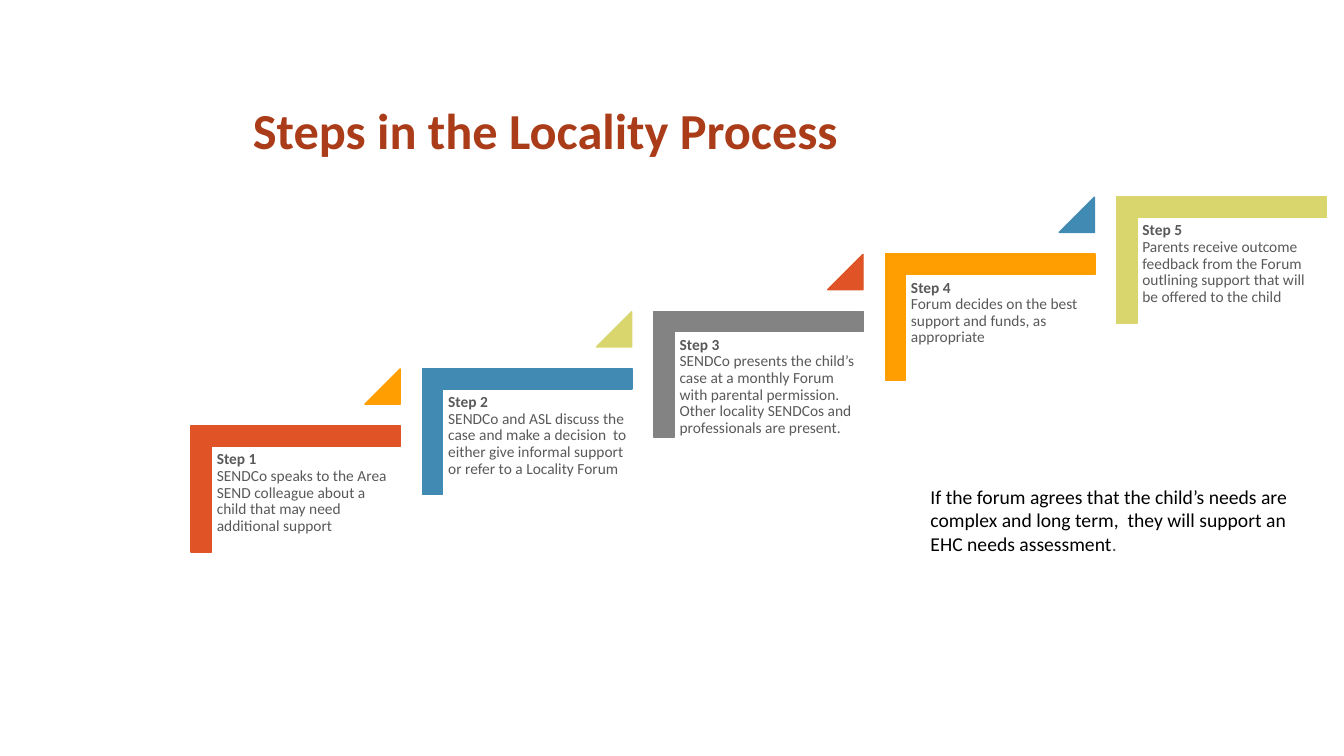
from pptx import Presentation
from pptx.dml.color import RGBColor
from pptx.enum.shapes import MSO_SHAPE
from pptx.enum.text import MSO_ANCHOR, PP_ALIGN
from pptx.util import Inches, Pt

COLORS = {
    "title": "AB3C19", "body": "595959", "black": "000000",
    "red": "DF5327", "blue": "418AB3", "gray": "838383",
    "orange": "FE9E00", "lime": "D9D66D",
}
# Label, description, bracket colour, triangle colour
STEPS = [
    ("Step 1", "SENDCo speaks to the Area SEND colleague about a child "
     "that may need additional support", "red", "orange"),
    ("Step 2", "SENDCo and ASL discuss the case and make a decision  to either "
     "give informal support or refer to a Locality Forum", "blue", "lime"),
    ("Step 3", "SENDCo presents the child’s case at a monthly Forum with parental "
     "permission. Other locality SENDCos and professionals are present.", "gray", "red"),
    ("Step 4", "Forum decides on the best support and funds, as appropriate",
     "orange", "blue"),
    ("Step 5", "Parents receive outcome feedback from the Forum outlining support "
     "that will be offered to the child", "lime", None),
]
STEP_RIGHT, STEP_UP = 2.295, 0.568

prs = Presentation()
prs.slide_width, prs.slide_height = Inches(13.33), Inches(7.5)
s = prs.slides.add_slide(prs.slide_layouts[6])


def add_text(x, y, w, h, runs, line_spacing=1.0, **frame_format):
    """Add a one-paragraph box; runs are (text, size, colour, bold), None is a line break."""
    tf = s.shapes.add_textbox(Inches(x), Inches(y), Inches(w), Inches(h)).text_frame
    tf.word_wrap = True
    for name, value in frame_format.items():
        setattr(tf, name, value)
    p = tf.paragraphs[0]
    p.alignment, p.line_spacing = PP_ALIGN.LEFT, line_spacing
    for run in runs:
        if run is None:
            p.add_line_break()
            continue
        text, size, color, bold = run
        r = p.add_run()
        r.text = text
        r.font.color.rgb = RGBColor.from_string(COLORS[color])
        for name, value in {"name": "Calibri", "size": Pt(size), "bold": bold}.items():
            setattr(r.font, name, value)


def add_mark(kind, x, y, w, h, color, adjustments, rotation=0):
    sp = s.shapes.add_shape(kind, Inches(x), Inches(y), Inches(w), Inches(h))
    sp.shadow.inherit = False
    sp.rotation = rotation
    for i, value in enumerate(adjustments):
        sp.adjustments[i] = value
    rgb = RGBColor.from_string(COLORS[color])
    sp.fill.solid()
    sp.fill.fore_color.rgb = rgb
    sp.line.color.rgb = rgb
    sp.line.width = Pt(1)


add_text(2.41, 0.33, 10.25, 1.31, [("Steps in the Locality Process", 36, "title", True)],
         line_spacing=0.9, vertical_anchor=MSO_ANCHOR.BOTTOM)

inset = Inches(0.05)
margins = {f"margin_{side}": inset for side in ("left", "right", "top", "bottom")}
for i, (label, description, color, triangle_color) in enumerate(STEPS):
    dx, dy = i * STEP_RIGHT, -i * STEP_UP
    add_mark(MSO_SHAPE.CORNER, 2.31 + dx, 3.81 + dy, 1.25, 2.08, color,
             [0.161, 0.161], rotation=90)
    add_text(2.1 + dx, 4.43 + dy, 1.88, 1.64,
             [(label, 11, "body", True), None, (description, 11, "body", False)],
             line_spacing=0.9, **margins)
    if triangle_color:
        add_mark(MSO_SHAPE.ISOSCELES_TRIANGLE, 3.62 + dx, 3.66 + dy, 0.35, 0.35,
                 triangle_color, [1])

add_text(9.13, 4.76, 3.75, 0.81, [
    ("If the forum agrees that the child’s needs are complex and long term,  "
     "they will support an EHC needs assessment", 14, "black", False),
    (".", 14, "body", False),
])

prs.save("out.pptx")
